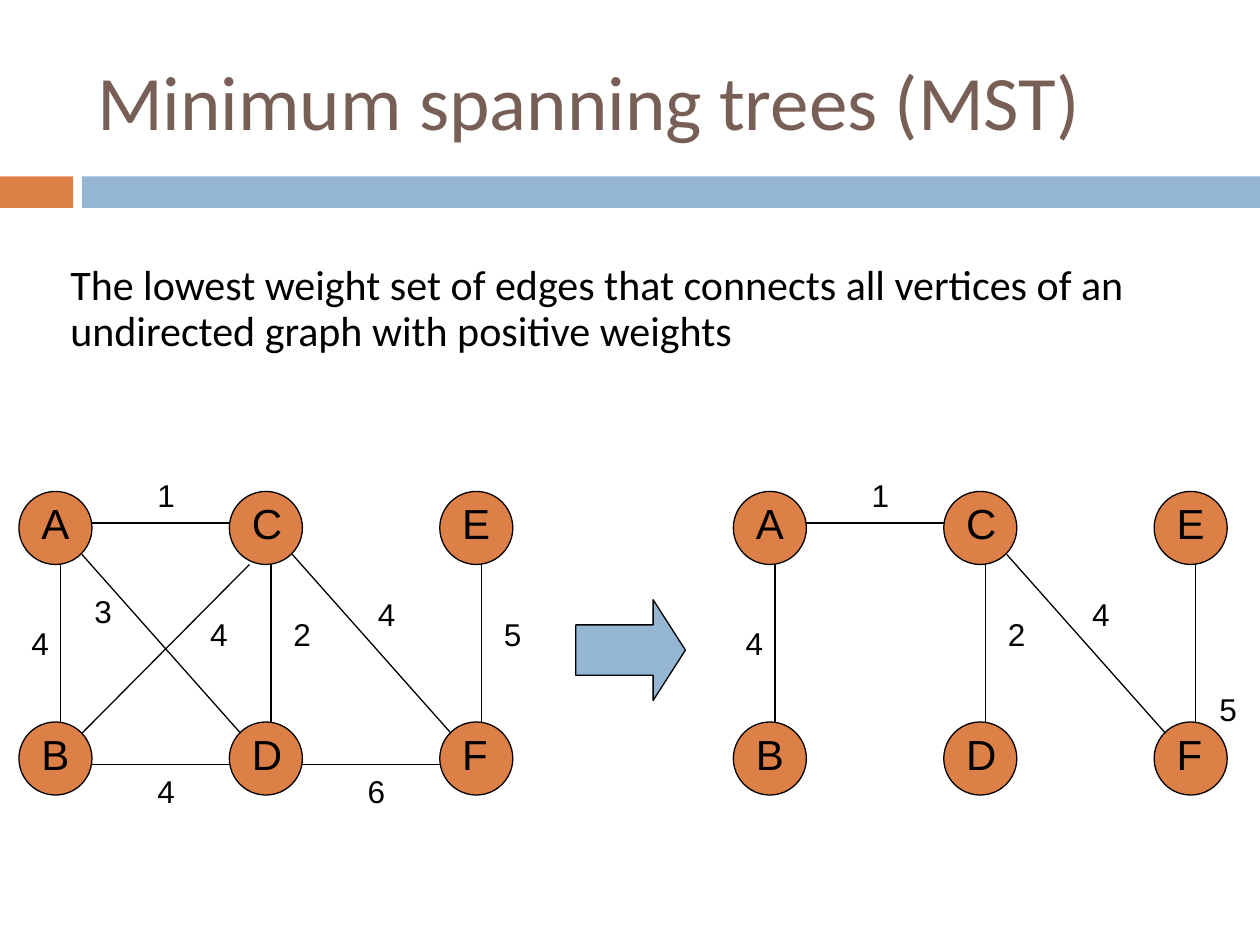
from dataclasses import dataclass

from lxml.etree import SubElement
from pptx import Presentation
from pptx.dml.color import RGBColor
from pptx.enum.shapes import MSO_CONNECTOR as Connector, MSO_SHAPE as Shape
from pptx.enum.text import MSO_ANCHOR as Anchor, MSO_AUTO_SIZE as AutoSize, PP_ALIGN as Align
from pptx.oxml.ns import qn
from pptx.util import Inches, Pt


@dataclass(frozen=True)
class Theme:
    orange: RGBColor = RGBColor.from_string("DD8047")
    blue: RGBColor = RGBColor.from_string("94B6D2")
    brown: RGBColor = RGBColor.from_string("775F55")
    black: RGBColor = RGBColor.from_string("000000")
    text_font: str = "Calibri"
    graph_font: str = "Arial"
    title_size: int = 44
    body_size: int = 24
    vertex_size: int = 24
    weight_size: int = 18
    line_width: float = 0.75


THEME = Theme()

# Grid of vertices: column and row of each, and the steps between them
VERTICES = {"A": (0, 0), "B": (0, 1), "C": (1, 0), "D": (1, 1), "E": (2, 0), "F": (2, 1)}
COLUMN_STEP, ROW_STEP, DIAMETER = 1.67, 1.83, 0.58

# Points on a vertex where edges meet it, from its top left corner
PORTS = {
    "right of top row": (0.58, 0.25), "left of top row": (0, 0.25),
    "right of bottom row": (0.58, 0.34), "left of bottom row": (0, 0.34),
    "top": (0.33, 0), "bottom": (0.33, 0.58),
    "lower right": (0.5, 0.5), "upper left": (0.09, 0.09),
    "upper right": (0.5, 0.09), "lower left": (0.16, 0.58),
}
ACROSS_TOP = ("right of top row", "left of top row")
ACROSS_BOTTOM = ("right of bottom row", "left of bottom row")
UPWARD = ("top", "bottom")
FALLING = ("lower right", "upper left")
RISING = ("upper right", "lower left")

# Edge: ends, ports, weight, place of the weight within the graph
TREE_EDGES = [
    ("DC", UPWARD, "2", (2.08, 0.93)),
    ("BA", UPWARD, "4", (0, 1)),
    ("AC", ACROSS_TOP, "1", (1, -0.17)),
    ("CF", FALLING, "4", (2.75, 0.77)),
]
FULL_EDGES = TREE_EDGES + [
    ("FE", UPWARD, "5", (3.75, 0.93)),
    ("BD", ACROSS_BOTTOM, "4", (1, 2.18)),
    ("AD", FALLING, "3", (0.5, 0.75)),
    ("DF", ACROSS_BOTTOM, "6", (2.67, 2.18)),
    ("BC", RISING, "4", (1.42, 0.93)),
]
SPANNING_EDGES = TREE_EDGES + [("FE", UPWARD, "5", (3.76, 1.53))]


def format_text(frame, font, size, color):
    for para in frame.paragraphs:
        para.alignment = Align.LEFT
        for span in para.runs:
            span.font.name = font
            span.font.size = Pt(size)
            span.font.color.rgb = color


def add_text(shapes, box, text, font, size):
    text_box = shapes.add_textbox(*map(Inches, box))
    frame = text_box.text_frame
    frame.word_wrap = True
    frame.text = text
    format_text(frame, font, size, THEME.black)
    return frame


def add_filled(shapes, kind, box, color, outlined=True):
    shape = shapes.add_shape(kind, *map(Inches, box))
    shape.shadow.inherit = False
    shape.fill.solid()
    shape.fill.fore_color.rgb = color
    if outlined:
        shape.line.color.rgb = THEME.black
        shape.line.width = Pt(THEME.line_width)
    else:
        shape.line.fill.background()
    return shape


def add_edge(page, start, end):
    edge = page.shapes.add_connector(Connector.STRAIGHT, *map(Inches, start + end))
    edge.line.color.rgb = THEME.black
    edge.line.width = Pt(THEME.line_width)
    SubElement(edge._element.spPr, qn("a:effectLst"))


def add_vertex(page, name, left, top):
    group = page.shapes.add_group_shape()
    add_filled(group.shapes, Shape.OVAL, (left, top, DIAMETER, DIAMETER), THEME.orange)
    add_text(group.shapes, (left + 0.08, top, 0.5, 0.5), name,
             THEME.graph_font, THEME.vertex_size)


def add_graph(page, left, top, edges):
    corners = {name: (left + column * COLUMN_STEP, top + row * ROW_STEP)
               for name, (column, row) in VERTICES.items()}
    for name, corner in corners.items():
        add_vertex(page, name, *corner)
    for ends, ports, weight, (label_x, label_y) in edges:
        start, end = ((corners[name][0] + PORTS[port][0], corners[name][1] + PORTS[port][1])
                      for name, port in zip(ends, ports))
        add_edge(page, start, end)
        add_text(page.shapes, (left + label_x, top + label_y, 0.58, 0.4), weight,
                 THEME.graph_font, THEME.weight_size)


def add_header(page, band_top):
    # Two-part colour band
    add_filled(page.shapes, Shape.RECTANGLE, (0, band_top, 0.58, 0.25), THEME.orange, False)
    add_filled(page.shapes, Shape.RECTANGLE, (0.65, band_top, 9.35, 0.25), THEME.blue, False)
    # Title
    title = page.shapes.title
    title.left, title.top, title.width, title.height = map(
        Inches, (0.67, band_top - 1.15, 8.92, 1.08))
    frame = title.text_frame
    frame.text = "Minimum spanning trees (MST)"
    frame.vertical_anchor = Anchor.MIDDLE
    frame.auto_size = AutoSize.NONE
    format_text(frame, THEME.text_font, THEME.title_size, THEME.brown)


def add_definition(page, box):
    frame = add_text(page.shapes, box,
                     "The lowest weight set of edges that connects all vertices of an "
                     "undirected graph with positive weights",
                     THEME.text_font, THEME.body_size)
    para = frame.paragraphs[0]
    para.line_spacing = 0.9
    para.space_before = Pt(7)


def add_arrow(page, box):
    arrow = add_filled(page.shapes, Shape.RIGHT_ARROW, box, THEME.blue)
    arrow.adjustments[0] = 0.5
    arrow.adjustments[1] = 0.32


def main():
    deck = Presentation()
    deck.slide_width, deck.slide_height = Inches(10), Inches(7.5)
    page = deck.slides.add_slide(deck.slide_layouts[5])
    add_header(page, 1.4)
    add_graph(page, 0.15, 3.9, FULL_EDGES)
    add_graph(page, 5.82, 3.9, SPANNING_EDGES)
    add_arrow(page, (4.57, 4.76, 0.87, 0.8))
    add_definition(page, (0.46, 2.05, 9, 1.26))
    deck.save("out.pptx")


if __name__ == "__main__":
    main()
